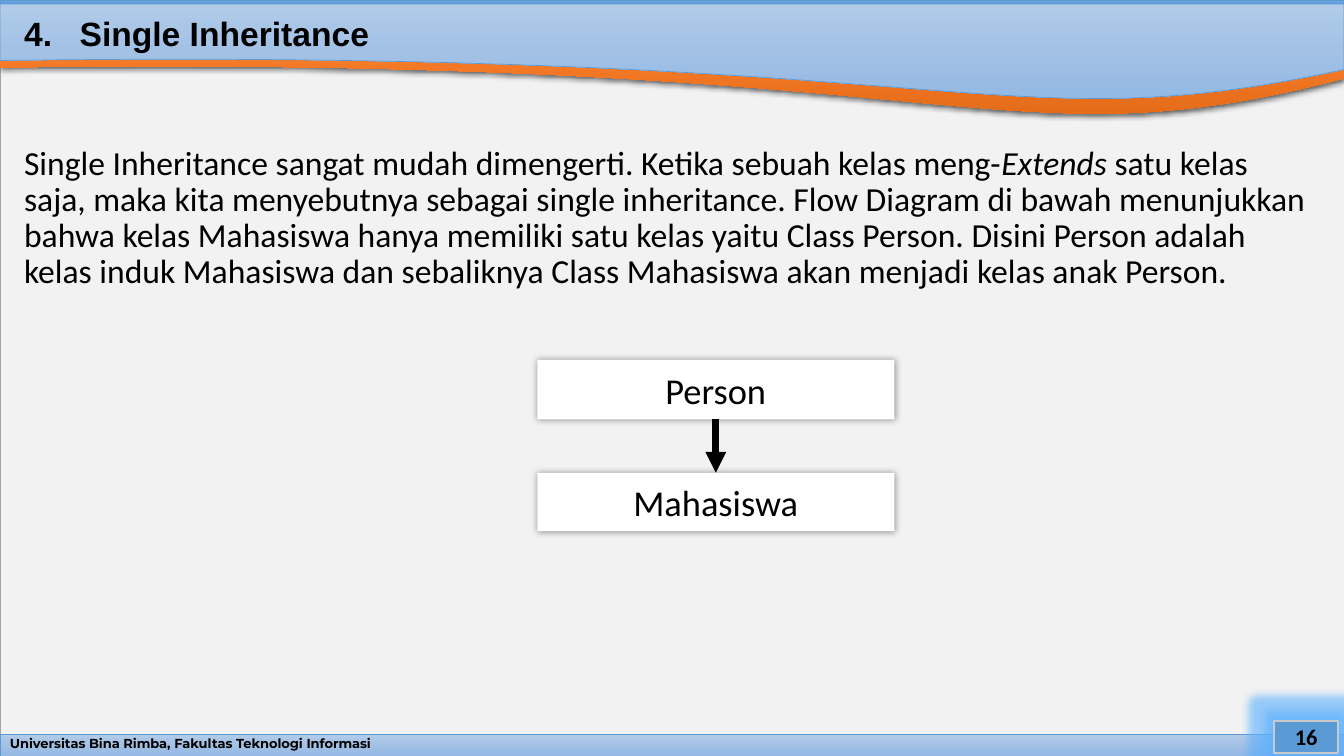
from lxml.etree import SubElement
from pptx import Presentation
from pptx.dml.color import RGBColor
from pptx.enum.shapes import MSO_CONNECTOR, MSO_SHAPE
from pptx.enum.text import MSO_ANCHOR, PP_ALIGN
from pptx.oxml.ns import qn
from pptx.util import Inches, Pt

WIDTH, HEIGHT = 13.33, 7.5
BLACK = "000000"
LIGHT_BLUE = ("B1CBE9", "A3C1E5", "93B9E4")
DEEP_BLUE = ("71A6DB", "559BDB", "448ACA")
ORANGE = ("F18C57", "F67B28", "E56C19")
EDGE_BLUE = "5B9BD5"


def color(value):
    return RGBColor.from_string(value)


def paint(shape, fill, line=None, line_width=0.5):
    shape.shadow.inherit = False
    if isinstance(fill, tuple):
        shape.fill.gradient()
        shape.fill.gradient_angle = 270
        stops = shape._element.spPr.find(".//" + qn("a:gsLst"))
        for stop in list(stops):
            stops.remove(stop)
        for position, value in zip((0, 50000, 100000), fill):
            stop = SubElement(stops, qn("a:gs"), pos=str(position))
            SubElement(stop, qn("a:srgbClr"), val=value)
    else:
        shape.fill.solid()
        shape.fill.fore_color.rgb = color(fill)
    if line:
        shape.line.color.rgb = color(line)
        shape.line.width = Pt(line_width)
    else:
        shape.line.fill.background()


def add_effect(shape, kind, value, alpha, **settings):
    effects = shape._element.spPr.find(qn("a:effectLst"))
    effect = SubElement(effects, qn(kind), {k: str(v) for k, v in settings.items()})
    tint = SubElement(effect, qn("a:srgbClr"), val=value)
    SubElement(tint, qn("a:alpha"), val=str(alpha * 1000))


def add_shadow(shape, alpha, blur, distance, angle):
    add_effect(shape, "a:outerShdw", BLACK, alpha, blurRad=Pt(blur),
               dist=Pt(distance), dir=angle * 60000, algn="ctr", rotWithShape=0)


def add_box(slide, left, top, width, height, fill, line=None, line_width=0.5):
    box = slide.shapes.add_shape(MSO_SHAPE.RECTANGLE, Inches(left), Inches(top),
                                 Inches(width), Inches(height))
    paint(box, fill, line, line_width)
    return box


def add_wave(slide, top, left_end, first_bend, second_bend, right_end, fill, line=None):
    bends = ((0, left_end), (9.76, first_bend), (9.86, second_bend), (WIDTH, right_end))
    steps = 60
    curve = []
    for step in range(steps + 1):
        t = step / steps
        weights = ((1 - t) ** 3, 3 * t * (1 - t) ** 2, 3 * t * t * (1 - t), t ** 3)
        curve.append(tuple(Inches(sum(w * bend[axis] for w, bend in zip(weights, bends)))
                           for axis in (0, 1)))
    builder = slide.shapes.build_freeform(Inches(WIDTH), Inches(top))
    builder.add_line_segments([(0, Inches(top))] + curve, close=True)
    wave = builder.convert_to_shape()
    paint(wave, fill, line)
    return wave


def write(shape, pieces, size, font="Calibri", bold=False, align=PP_ALIGN.LEFT,
          anchor=MSO_ANCHOR.MIDDLE, spacing=1.0, before=0, margin=0.05):
    frame = shape.text_frame
    frame.word_wrap = True
    frame.vertical_anchor = anchor
    frame.margin_left = frame.margin_right = Inches(0.1)
    frame.margin_top = frame.margin_bottom = Inches(margin)
    paragraph = frame.paragraphs[0]
    paragraph.alignment = align
    paragraph.line_spacing = spacing
    paragraph.space_before = Pt(before)
    for text, italic in pieces:
        run = paragraph.add_run()
        run.text = text
        run.font.name = font
        run.font.size = Pt(size)
        run.font.bold = bold
        run.font.italic = italic
        run.font.color.rgb = color(BLACK)
    return paragraph


def add_text(slide, left, top, width, height, pieces, size, **style):
    box = slide.shapes.add_textbox(Inches(left), Inches(top), Inches(width), Inches(height))
    write(box, pieces, size, **style)


def add_class(slide, name, top, height):
    box = add_box(slide, 5.33, top, 3.54, height, "FFFFFF")
    add_shadow(box, 40, 5, 0, 0)
    write(box, [(name, False)], 26, align=PP_ALIGN.CENTER)


def add_arrow(slide, x, top, bottom):
    arrow = slide.shapes.add_connector(MSO_CONNECTOR.STRAIGHT, Inches(x), Inches(top),
                                       Inches(x), Inches(bottom))
    arrow.line.color.rgb = color(BLACK)
    arrow.line.width = Pt(5)
    SubElement(arrow.line._get_or_add_ln(), qn("a:tailEnd"), type="triangle")
    SubElement(arrow._element.spPr, qn("a:effectLst"))


def add_frame(slide):
    add_box(slide, 0, 0.04, WIDTH, 7.46, "F2F2F2", "A5A5A5")
    add_shadow(add_wave(slide, 0.01, 0.67, 0.53, 1.68, 0.78, ORANGE), 63, 4.5, 1.5, 90)
    add_box(slide, 0, 7.29, WIDTH, 0.21, LIGHT_BLUE, EDGE_BLUE)
    add_box(slide, 0, 0, WIDTH, 0.11, DEEP_BLUE, EDGE_BLUE)
    add_wave(slide, 0.04, 0.6, 0.47, 1.44, 0.69, LIGHT_BLUE, EDGE_BLUE)
    add_text(slide, 0, 7.29, WIDTH, 0.21,
             [("Universitas Bina Rimba, Fakultas Teknologi Informasi", False)], 9.3,
             font="Montserrat", bold=True, spacing=0.7)
    page_number = add_box(slide, 12.64, 7.15, 0.63, 0.32, EDGE_BLUE, "C9C9C9", 1.5)
    add_effect(page_number, "a:glow", "5AB0FF", 60, rad=Pt(12))
    write(page_number, [("16", False)], 16, bold=True, align=PP_ALIGN.CENTER)


def add_title(slide):
    title = slide.shapes.title
    title.left, title.top = Inches(0.14), Inches(0.12)
    title.width, title.height = Inches(12.98), Inches(0.46)
    heading = write(title, [("4.\tSingle Inheritance", False)], 24, font="Arial",
                    bold=True, spacing=0.9)
    tabs = SubElement(heading._p.get_or_add_pPr(), qn("a:tabLst"))
    SubElement(tabs, qn("a:tab"), pos=str(Inches(0.55)), algn="l")
    slide.shapes._spTree.append(title._element)


def main():
    deck = Presentation()
    deck.slide_width, deck.slide_height = Inches(WIDTH), Inches(HEIGHT)
    slide = deck.slides.add_slide(deck.slide_layouts[5])
    add_frame(slide)
    add_title(slide)
    add_text(slide, 0.14, 1.4, 12.98, 2.17, [
        ("Single Inheritance sangat mudah dimengerti. Ketika sebuah kelas meng-", False),
        ("Extends ", True),
        ("satu kelas saja, maka kita menyebutnya sebagai single inheritance. Flow Diagram "
         "di bawah menunjukkan bahwa kelas Mahasiswa hanya memiliki satu kelas yaitu Class "
         "Person. Disini Person adalah kelas induk Mahasiswa dan sebaliknya Class Mahasiswa "
         "akan menjadi kelas anak Person.", False),
    ], 24, anchor=MSO_ANCHOR.TOP, spacing=0.9, before=10)
    add_class(slide, "Person", 3.57, 0.59)
    add_class(slide, "Mahasiswa", 4.69, 0.58)
    add_arrow(slide, 7.1, 4.16, 4.69)
    deck.save("out.pptx")


if __name__ == "__main__":
    main()
